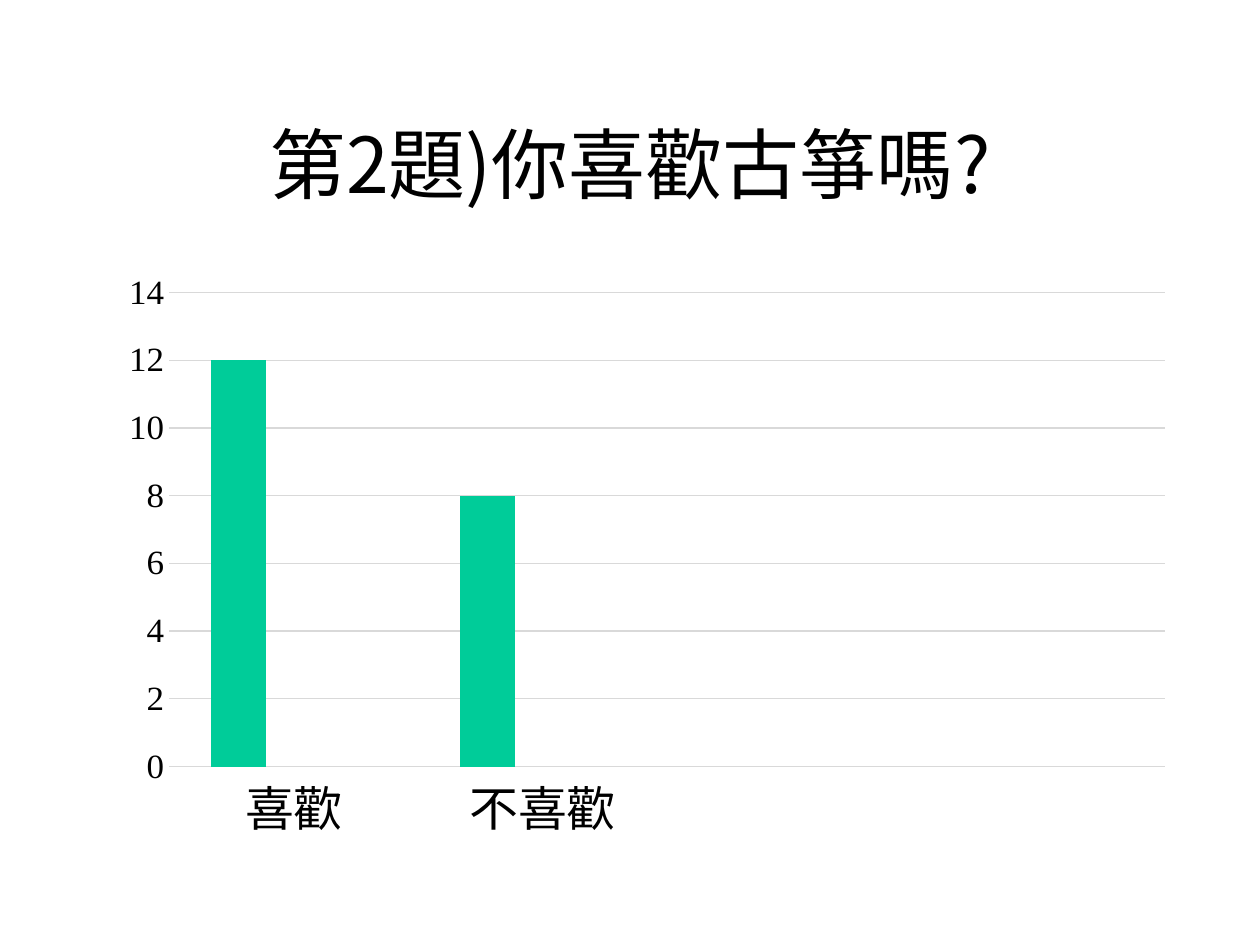
from pptx import Presentation
from pptx.chart.data import CategoryChartData
from pptx.dml.color import RGBColor
from pptx.enum.chart import XL_CHART_TYPE, XL_TICK_MARK
from pptx.enum.text import MSO_ANCHOR, PP_ALIGN
from pptx.oxml import parse_xml
from pptx.oxml.ns import nsdecls
from pptx.util import Inches, Pt

COLUMN = XL_CHART_TYPE.COLUMN_CLUSTERED
NO_TICK = XL_TICK_MARK.NONE
MIDDLE = MSO_ANCHOR.MIDDLE
CENTER = PP_ALIGN.CENTER
SANS = "Noto Sans CJK SC"
SERIF = "Times New Roman"


def rgb(code):
    return RGBColor.from_string(code)


def style(font, size, name):
    for key, value in {"size": Pt(size), "name": name, "bold": False}.items():
        setattr(font, key, value)
    font.color.rgb = rgb("000000")


deck = Presentation()
deck.slide_width, deck.slide_height = Inches(10), Inches(7.5)
slide = deck.slides.add_slide(deck.slide_layouts[5])

# Title
title = slide.shapes.title
title.left, title.top = Inches(0.75), Inches(0.67)
title.width, title.height = Inches(8.5), Inches(1.25)
title.text_frame.vertical_anchor = MIDDLE
para = title.text_frame.paragraphs[0]
para.alignment = CENTER
run = para.add_run()
run.text = "第2題)你喜歡古箏嗎?"
style(run.font, 44, SANS)

# Chart data: the last two categories and series are empty
data = CategoryChartData()
data.categories = ["喜歡", "不喜歡", "", ""]
votes = [[12, 8, None, None], [None] * 4, [None] * 4]
for num, vals in enumerate(votes, 1):
    data.add_series(f"Series {num}", vals)

# Column chart
chart = slide.shapes.add_chart(
    COLUMN, Inches(0.75), Inches(2.17), Inches(8.5), Inches(4.5), data
).chart
chart.has_legend = False
chart.has_title = False
style(chart.font, 10, SERIF)
plot = chart.plots[0]
plot.gap_width = 150
plot.overlap = 0
plot.vary_by_categories = False
for series, code in zip(plot.series, ["00CC99", "3333CC", "FFFFFF"]):
    series.format.fill.solid()
    series.format.fill.fore_color.rgb = rgb(code)

# Axes
cat, val = chart.category_axis, chart.value_axis
for axis, size, name in [(cat, 28, SANS), (val, 20, SERIF)]:
    axis.major_tick_mark = axis.minor_tick_mark = NO_TICK
    axis.format.line.fill.background()
    style(axis.tick_labels.font, size, name)
cat.has_major_gridlines = False
val.minimum_scale, val.maximum_scale, val.major_unit = 0, 14, 2
grid = val.major_gridlines.format.line
grid.width = Pt(0.75)
grid.color.rgb = rgb("D9D9D9")

# East Asian font for the title and the category labels
for props in (run.font._element, cat._element.xpath(".//a:defRPr")[0]):
    props.append(parse_xml(f'<a:ea {nsdecls("a")} typeface="{SANS}"/>'))

# Fixed inner plot area
sides = {"x": 0.07, "y": 0.03, "w": 0.93, "h": 0.86}
marks = "".join(f'<c:{key}Mode val="edge"/>' for key in "xy")
marks += "".join(f'<c:{key} val="{part}"/>' for key, part in sides.items())
layout = parse_xml(
    f'<c:layout {nsdecls("c")}><c:manualLayout><c:layoutTarget val="inner"/>'
    f"{marks}</c:manualLayout></c:layout>"
)
area = chart._chartSpace.chart.plotArea
for old in area.xpath("./c:layout"):
    area.remove(old)
area.insert(0, layout)

deck.save("out.pptx")
